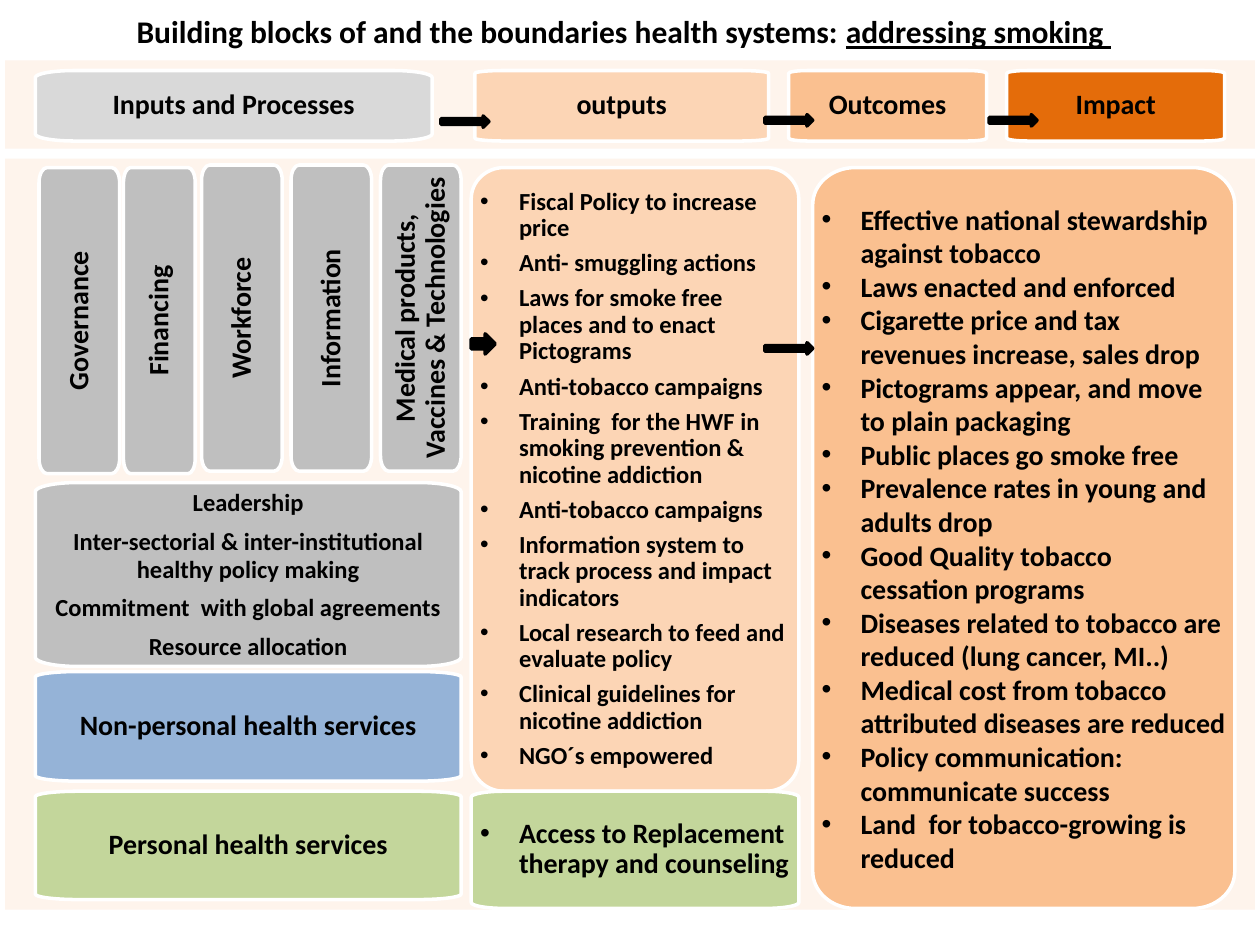
import pptx
import pptx.util
import pptx.dml.color
import pptx.enum.shapes
import pptx.enum.text
from lxml import etree
from pptx.util import Inches, Pt

RGBColor = pptx.dml.color.RGBColor
MSO_SHAPE = pptx.enum.shapes.MSO_SHAPE
PP_ALIGN = pptx.enum.text.PP_ALIGN
MSO_ANCHOR = pptx.enum.text.MSO_ANCHOR

BLACK = RGBColor(0x00, 0x00, 0x00)
WHITE = RGBColor(0xFF, 0xFF, 0xFF)
CREAM = RGBColor(0xFE, 0xF4, 0xEC)
LIGHT_GREY = RGBColor(0xD9, 0xD9, 0xD9)
GREY = RGBColor(0xBF, 0xBF, 0xBF)
PEACH = RGBColor(0xFC, 0xD5, 0xB5)
ORANGE = RGBColor(0xFA, 0xC0, 0x90)
DARK_ORANGE = RGBColor(0xE4, 0x6C, 0x0A)
BLUE = RGBColor(0x95, 0xB3, 0xD7)
GREEN = RGBColor(0xC3, 0xD6, 0x9B)
FONT = "Calibri"
INDENT = Inches(0.31)
CURVE = 0.55  # how far a Bézier handle reaches towards the corner
A = "{http://schemas.openxmlformats.org/drawingml/2006/main}"

prs = pptx.Presentation()
prs.slide_width, prs.slide_height = Inches(10), Inches(7.5)
s = prs.slides.add_slide(prs.slide_layouts[6])


def add_run(p, text, size):
    r = p.add_run()
    r.text = text
    r.font.name, r.font.size, r.font.bold = FONT, Pt(size), True
    r.font.color.rgb = BLACK
    return r


def add_block(left, top, width, height, fill, lines, size=16, inset=0.07, round_y=0.05,
              spacing=0.9, after=None, bullets=False, vertical=False):
    """Draw a text block whose elliptical corners take 10 % of its width and round_y of its height."""
    x, y, w, h = map(Inches, (left, top, width, height))
    rx, ry = int(w * 0.1), int(h * round_y)
    points = [(0, ry), (rx, 0), (w - rx, 0), (w, ry),
              (w, h - ry), (w - rx, h), (rx, h), (0, h - ry)]
    outline = s.shapes.build_freeform(*points[0], scale=1.0)
    outline.add_line_segments(points[1:] + points[:1], close=True)
    sp = outline.convert_to_shape(x, y)

    # Every other segment is a corner: turn it into a curve
    segments = list(sp.element.iter(A + "lnTo"))
    corners = [(0, 0), (w, 0), (w, h), (0, h)]
    for segment, corner, start, end in zip(segments[::2], corners, points[::2], points[1::2]):
        curve = etree.Element(A + "cubicBezTo")
        handles = [[round(e + (c - e) * CURVE) for e, c in zip(edge, corner)]
                   for edge in (start, end)]
        for px, py in handles + [end]:
            etree.SubElement(curve, A + "pt", x=str(px), y=str(py))
        segment.getparent().replace(segment, curve)

    sp.shadow.inherit = False
    sp.fill.solid()
    sp.fill.fore_color.rgb = fill
    sp.line.color.rgb = WHITE
    sp.line.width = Pt(2)

    tf = sp.text_frame
    tf.word_wrap = True
    tf.vertical_anchor = MSO_ANCHOR.MIDDLE
    tf.margin_left = tf.margin_right = Inches(inset)
    tf.margin_top = tf.margin_bottom = Inches(inset)
    if vertical:
        sp.element.txBody.bodyPr.set("vert", "vert270")
    for i, line in enumerate(lines):
        p = tf.add_paragraph() if i else tf.paragraphs[0]
        p.alignment = PP_ALIGN.LEFT if bullets else PP_ALIGN.CENTER
        p.line_spacing = spacing
        p.space_after = Pt(size * 0.35 if after is None else after)
        add_run(p, line, size)
        if bullets:
            pPr = p._p.get_or_add_pPr()
            pPr.set("marL", str(INDENT))
            pPr.set("indent", str(-INDENT))
            etree.SubElement(pPr, A + "buFont", typeface="Arial")
            etree.SubElement(pPr, A + "buChar", char="•")


# Background bands
for top, height in [(1.26, 5.96), (0.48, 0.7)]:
    band = s.shapes.add_shape(MSO_SHAPE.RECTANGLE, Inches(0.04), Inches(top),
                              Inches(9.92), Inches(height))
    band.shadow.inherit = False
    band.fill.solid()
    band.fill.fore_color.rgb = CREAM
    band.line.fill.background()

# Title
title = s.shapes.add_textbox(Inches(0.28), Inches(0.05), Inches(9.34), Inches(0.4))
title.text_frame.word_wrap = True
p = title.text_frame.paragraphs[0]
p.alignment = PP_ALIGN.CENTER
add_run(p, "Building blocks of and the boundaries health systems: ", 18)
add_run(p, "addressing smoking ", 18).font.underline = True

# Header row
headers = [
    (0.28, 3.15, LIGHT_GREY, "Inputs and Processes", 0.12, 0.1),
    (3.77, 2.33, PEACH, "outputs", 0.09, 0.04),
    (6.26, 1.57, ORANGE, "Outcomes", 0.09, 0.04),
    (7.99, 1.73, DARK_ORANGE, "Impact", 0.09, 0.04),
]
for left, width, fill, text, inset, round_y in headers:
    add_block(left, 0.56, width, 0.56, fill, [text], inset=inset, round_y=round_y)

# Input pillars
pillars = [
    (0.31, 1.33, 0.64, "Governance"),
    (0.98, 1.33, 0.57, "Financing"),
    (1.6, 1.31, 0.64, "Workforce"),
    (2.31, 1.31, 0.64, "Information"),
    (3.02, 1.31, 0.64, "Medical products, Vaccines & Technologies"),
]
for left, top, width, text in pillars:
    add_block(left, top, width, 2.43, GREY, [text], vertical=True)

# Leadership and services
add_block(0.28, 3.83, 3.38, 1.46, GREY, [
    "Leadership",
    "Inter-sectorial & inter-institutional healthy policy making",
    "Commitment  with global agreements",
    "Resource allocation",
], size=14, spacing=Pt(16), after=6)
add_block(0.28, 5.33, 3.38, 0.87, BLUE, ["Non-personal health services"])
add_block(0.28, 6.28, 3.38, 0.86, GREEN, ["Personal health services"])

# Outputs
add_block(3.74, 1.33, 2.6, 4.95, PEACH, [
    "Fiscal Policy to increase price",
    "Anti- smuggling actions",
    "Laws for smoke free places and to enact Pictograms",
    "Anti-tobacco campaigns",
    "Training  for the HWF in smoking prevention & nicotine addiction",
    "Anti-tobacco campaigns",
    "Information system to track process and impact indicators",
    "Local research to feed and evaluate policy",
    "Clinical guidelines for nicotine addiction",
    "NGO´s empowered",
], size=14, bullets=True)
add_block(3.74, 6.28, 2.6, 0.93, GREEN,
          ["Access to Replacement therapy and counseling"], bullets=True)

# Outcomes and impact
add_block(6.45, 1.33, 3.35, 5.88, ORANGE, [
    "Effective national stewardship against tobacco",
    "Laws enacted and enforced",
    "Cigarette price and tax revenues increase, sales drop",
    "Pictograms appear, and move to plain packaging",
    "Public places go smoke free",
    "Prevalence rates in young and adults drop",
    "Good Quality tobacco cessation programs",
    "Diseases related to tobacco are reduced (lung cancer, MI..)",
    "Medical cost from tobacco attributed diseases are reduced",
    "Policy communication: communicate success",
    "Land  for tobacco-growing is reduced",
], spacing=1.0, after=0, bullets=True)

# Flow arrows
arrows = [
    (3.5, 0.92, 0.38, 0.09),
    (6.07, 0.91, 0.38, 0.09),
    (7.85, 0.91, 0.38, 0.09),
    (3.74, 2.65, 0.19, 0.16),
    (6.07, 2.72, 0.38, 0.09),
]
for box in arrows:
    arrow = s.shapes.add_shape(MSO_SHAPE.RIGHT_ARROW, *map(Inches, box))
    arrow.shadow.inherit = False
    arrow.fill.solid()
    arrow.fill.fore_color.rgb = BLACK
    arrow.line.color.rgb = BLACK
    arrow.line.width = Pt(2)

prs.save("out.pptx")
